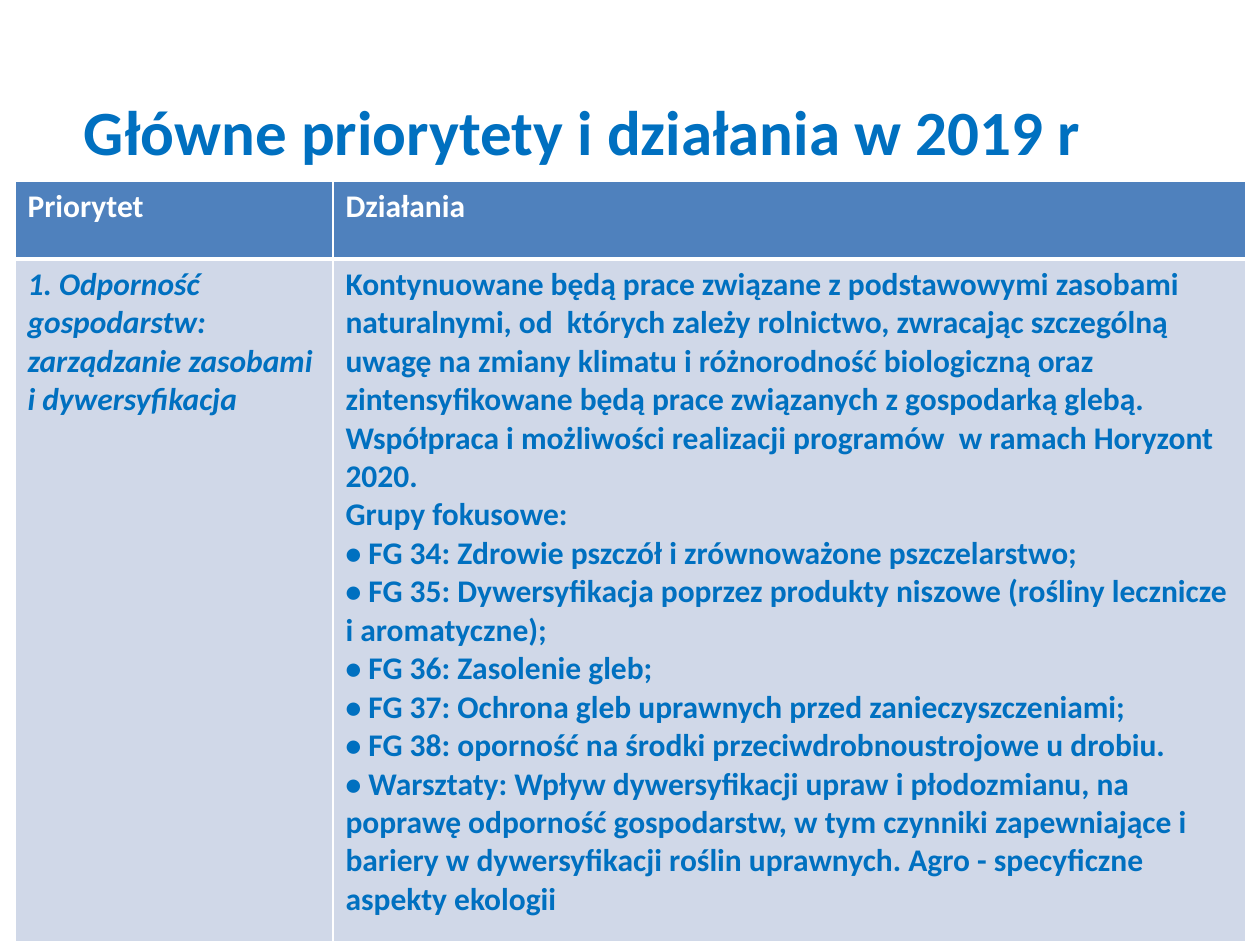
from lxml import etree
from pptx import Presentation
from pptx.dml.color import RGBColor
from pptx.enum.text import MSO_ANCHOR, PP_ALIGN
from pptx.oxml.ns import qn
from pptx.util import Emu, Pt

TOP = MSO_ANCHOR.TOP
LEFT = PP_ALIGN.LEFT

WHITE = RGBColor(0xFF, 0xFF, 0xFF)
BLUE = RGBColor(0x00, 0x70, 0xC0)
HEADER = RGBColor(0x4F, 0x81, 0xBD)
BODY = RGBColor(0xD0, 0xD8, 0xE8)

FONT = "Calibri"
PX_PER_INCH = 126
TITLE_ONLY = 5


def px(n):
    return Emu(round(n * 914400 / PX_PER_INCH))


def write(tf, text, size=18, color=BLUE, bold=True, italic=False):
    """Write each line of text as one paragraph."""
    for i, line in enumerate(text.split("\n")):
        p = tf.add_paragraph() if i else tf.paragraphs[0]
        p.alignment = LEFT
        r = p.add_run()
        r.text = line
        r.font.name = FONT
        r.font.size = Pt(size)
        r.font.bold = bold
        r.font.italic = italic
        r.font.color.rgb = color


class Deck:
    def __init__(self, width, height):
        self.prs = Presentation()
        self.prs.slide_width = px(width)
        self.prs.slide_height = px(height)
        self.s = None

    def add_slide(self):
        self.s = self.prs.slides.add_slide(self.prs.slide_layouts[TITLE_ONLY])

    def title(self, text, x, y, w, h, indent):
        sp = self.s.shapes.title
        sp.left, sp.top, sp.width, sp.height = map(px, (x, y, w, h))
        tf = sp.text_frame
        tf.word_wrap = True
        tf.vertical_anchor = TOP
        tf.margin_left = px(indent)
        write(tf, text, size=36)

    def borders(self, cell, bottom):
        """Draw white cell borders, 1 pt except for the bottom one."""
        tc_pr = cell._tc.get_or_add_tcPr()
        widths = {"lnL": 1, "lnR": 1, "lnT": 1, "lnB": bottom}
        for i, (tag, width) in enumerate(widths.items()):
            ln = etree.Element(qn(f"a:{tag}"), w=str(Pt(width)))
            fill = etree.SubElement(ln, qn("a:solidFill"))
            etree.SubElement(fill, qn("a:srgbClr"), val=str(WHITE))
            tc_pr.insert(i, ln)

    def table(self, rows, x, y, widths, heights):
        box = map(px, (x, y, sum(widths), sum(heights)))
        table = self.s.shapes.add_table(len(rows), len(widths), *box).table
        for col, width in zip(table.columns, widths):
            col.width = px(width)
        for i, (row, height) in enumerate(zip(rows, heights)):
            table.rows[i].height = px(height)
            head = i == 0
            for j, text in enumerate(row):
                cell = table.cell(i, j)
                cell.fill.solid()
                cell.fill.fore_color.rgb = HEADER if head else BODY
                self.borders(cell, bottom=3 if head else 1)
                if not head:
                    self.borders_top(cell)
                write(cell.text_frame, text, color=WHITE if head else BLUE,
                      italic=not head and j == 0)

    def borders_top(self, cell):
        """Match the thick line below the header."""
        cell._tc.tcPr.find(qn("a:lnT")).set("w", str(Pt(3)))


PRIORITY = "1. Odporność gospodarstw: zarządzanie zasobami i dywersyfikacja"
ACTIONS = "\n".join([
    "Kontynuowane będą prace związane z podstawowymi zasobami naturalnymi, "
    "od  których zależy rolnictwo, zwracając szczególną uwagę na zmiany "
    "klimatu i różnorodność biologiczną oraz zintensyfikowane będą prace "
    "związanych z gospodarką glebą.  Współpraca i możliwości realizacji "
    "programów  w ramach Horyzont 2020.",
    "Grupy fokusowe:",
    "• FG 34: Zdrowie pszczół i zrównoważone pszczelarstwo;",
    "• FG 35: Dywersyfikacja poprzez produkty niszowe (rośliny lecznicze "
    "i aromatyczne);",
    "• FG 36: Zasolenie gleb;",
    "• FG 37: Ochrona gleb uprawnych przed zanieczyszczeniami;",
    "• FG 38: oporność na środki przeciwdrobnoustrojowe u drobiu.",
    "• Warsztaty: Wpływ dywersyfikacji upraw i płodozmianu, na poprawę "
    "odporność gospodarstw, w tym czynniki zapewniające i bariery w "
    "dywersyfikacji roślin uprawnych. Agro - specyficzne aspekty ekologii",
])


def main():
    deck = Deck(1260, 945)
    deck.add_slide()

    # Title
    deck.title("Główne priorytety i działania w 2019 r", 15, 86, 1211, 89,
               indent=69)

    # Priorities and actions
    deck.table([("Priorytet", "Działania"), (PRIORITY, ACTIONS)],
               15, 181, widths=(318, 913), heights=(78, 683))

    deck.prs.save("out.pptx")


if __name__ == "__main__":
    main()
